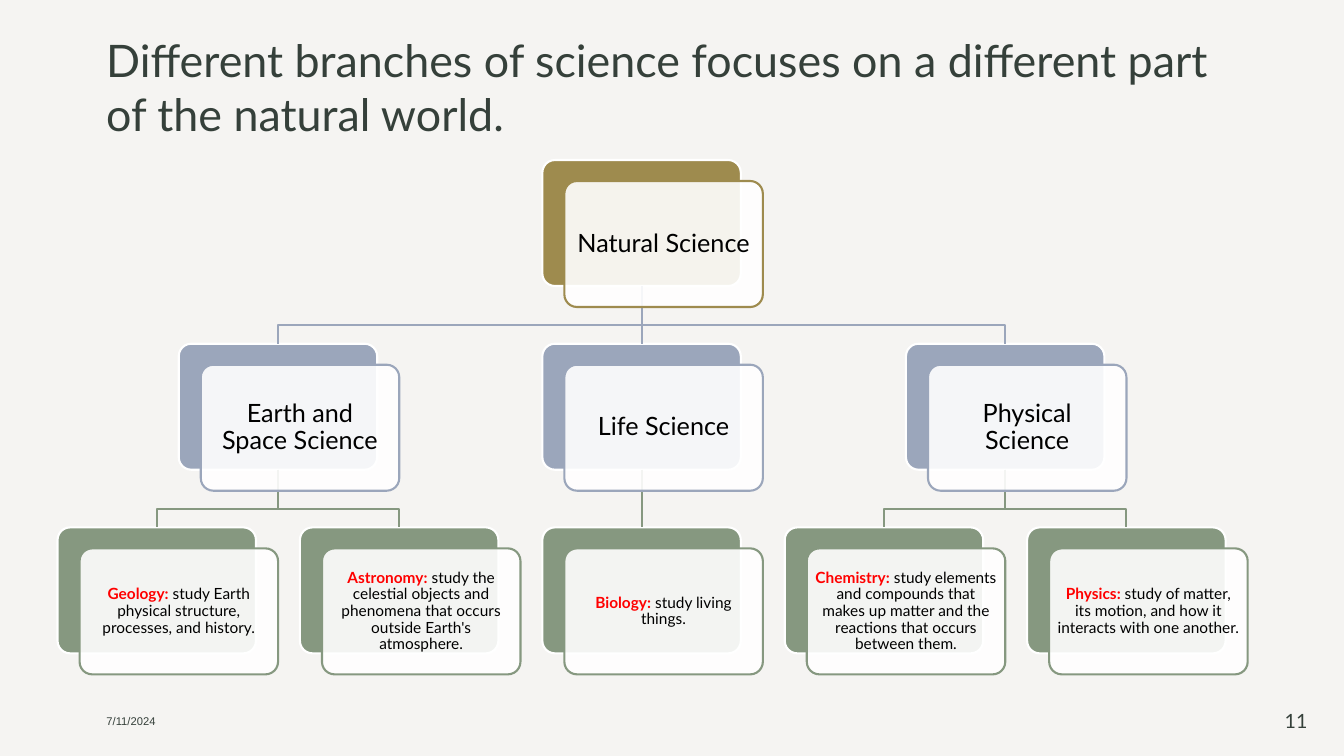
import lxml.etree
import pptx
import pptx.dml.color
import pptx.enum.shapes
import pptx.enum.text
import pptx.oxml.ns
import pptx.util
from dataclasses import dataclass

Pt = pptx.util.Pt
Shape = pptx.enum.shapes.MSO_SHAPE
Align = pptx.enum.text.PP_ALIGN
Anchor = pptx.enum.text.MSO_ANCHOR

TITLE = "Different branches of science focuses on a different part of the natural world."
DATE = "7/11/2024"
PAGE = "11"
ROOT = "Natural Science"
# Each branch holds its fields as (red heading, description).
BRANCHES = [
    ("Earth and Space Science", [
        ("Geology:", " study Earth physical structure, processes, and history."),
        ("Astronomy:", " study the celestial objects and phenomena that occurs outside Earth's atmosphere."),
    ]),
    ("Life Science", [
        ("Biology:", " study living things."),
    ]),
    ("Physical Science", [
        ("Chemistry:", " study elements and compounds that makes up matter and the reactions that occurs between them."),
        ("Physics:", " study of matter, its motion, and how it interacts with one another."),
    ]),
]


@dataclass(frozen=True)
class Theme:
    font: str = "Lato"
    date_font: str = "Arial"
    background: str = "F5F4F2"
    heading: str = "35403A"
    body: str = "000000"
    accent: str = "FF0000"
    card: str = "FFFFFF"
    levels: tuple = ("9E8B4E", "9BA6BB", "869880")
    title_size: float = 32
    label_size: float = 18
    field_size: float = 11
    date_size: float = 8
    page_size: float = 14
    line: float = 1.5
    card_opacity: int = 90


THEME = Theme()
CARD_WIDTH, CARD_HEIGHT = 141.8, 90
LEFT, TOP = 41.1, 114.3
COLUMN_STEP, ROW_STEP = 173.15, 131.2
FRONT_DX, FRONT_DY = 15.75, 15
BEND = 28  # drop from a card to the crossbar below it


@dataclass
class Node:
    level: int
    column: float
    runs: list
    parent: object = None
    back: object = None

    @property
    def left(self):
        return LEFT + self.column * COLUMN_STEP

    @property
    def top(self):
        return TOP + self.level * ROW_STEP

    @property
    def center(self):
        return self.left + CARD_WIDTH / 2


def rgb(value):
    return pptx.dml.color.RGBColor.from_string(value)


def write_text(shape, runs, size, font=THEME.font, align=Align.LEFT,
               anchor=Anchor.MIDDLE, inset=(7.2, 3.6), spacing=None):
    """Fill a shape with one paragraph of (text, colour, bold) runs."""
    frame = shape.text_frame
    frame.word_wrap = True
    frame.vertical_anchor = anchor
    frame.margin_left = frame.margin_right = Pt(inset[0])
    frame.margin_top = frame.margin_bottom = Pt(inset[1])
    paragraph = frame.paragraphs[0]
    paragraph.alignment = align
    if spacing:
        paragraph.line_spacing = spacing
    for text, color, bold in runs:
        run = paragraph.add_run()
        run.text = text
        run.font.name = font
        run.font.size = Pt(size)
        run.font.bold = bold
        run.font.color.rgb = rgb(color)


def add_text(slide, box, text, **text_format):
    shape = slide.shapes.add_textbox(*map(Pt, box))
    write_text(shape, [(text, THEME.heading, False)], **text_format)


def add_card(slide, left, top, fill, line):
    shape = slide.shapes.add_shape(
        Shape.ROUNDED_RECTANGLE, Pt(left), Pt(top), Pt(CARD_WIDTH), Pt(CARD_HEIGHT))
    shape.adjustments[0] = 0.1
    shape.shadow.inherit = False
    shape.fill.solid()
    shape.fill.fore_color.rgb = rgb(fill)
    shape.line.color.rgb = rgb(line)
    shape.line.width = Pt(THEME.line)
    return shape


def add_front(slide, node):
    shape = add_card(slide, node.left + FRONT_DX, node.top + FRONT_DY,
                     THEME.card, THEME.levels[node.level])
    qn = pptx.oxml.ns.qn
    color = shape.fill._xPr.find(qn("a:solidFill")).find(qn("a:srgbClr"))
    alpha = lxml.etree.SubElement(color, qn("a:alpha"))
    alpha.set("val", str(THEME.card_opacity * 1000))
    is_field = node.level == 2
    inset = 3.3 if is_field else 5.4
    write_text(shape, node.runs, THEME.field_size if is_field else THEME.label_size,
               align=Align.CENTER, inset=(inset, inset), spacing=0.9)


def link(slide, parent, child):
    """Join parent to child: straight if aligned, otherwise with two bends."""
    start = parent.top + CARD_HEIGHT
    if parent.column == child.column:
        line = slide.shapes.add_connector(
            pptx.enum.shapes.MSO_CONNECTOR.STRAIGHT,
            Pt(parent.center), Pt(start), Pt(child.center), Pt(child.top))
        line.begin_connect(parent.back, 2)
        line.end_connect(child.back, 0)
        lxml.etree.SubElement(line._element.spPr, pptx.oxml.ns.qn("a:effectLst"))
    else:
        builder = slide.shapes.build_freeform(Pt(parent.center), Pt(start))
        corners = [(parent.center, start + BEND), (child.center, start + BEND),
                   (child.center, child.top)]
        builder.add_line_segments([(Pt(x), Pt(y)) for x, y in corners], close=False)
        line = builder.convert_to_shape()
        line.shadow.inherit = False
        line.fill.background()
    line.line.color.rgb = rgb(THEME.levels[child.level])
    line.line.width = Pt(THEME.line)


def build_nodes():
    """Give fields one column each and centre every branch over its fields."""
    field_count = sum(len(fields) for _, fields in BRANCHES)
    root = Node(0, (field_count - 1) / 2, [(ROOT, THEME.body, False)])
    nodes, column = [root], 0
    for name, fields in BRANCHES:
        branch = Node(1, column + (len(fields) - 1) / 2, [(name, THEME.body, False)], root)
        nodes.append(branch)
        for heading, description in fields:
            runs = [(heading, THEME.accent, True), (description, THEME.body, False)]
            nodes.append(Node(2, column, runs, branch))
            column += 1
    return nodes


def main():
    presentation = pptx.Presentation()
    presentation.slide_width, presentation.slide_height = Pt(960), Pt(540)
    slide = presentation.slides.add_slide(presentation.slide_layouts[6])
    slide.background.fill.solid()
    slide.background.fill.fore_color.rgb = rgb(THEME.background)

    add_text(slide, (68.75, 10.8, 823, 92.9), TITLE, size=THEME.title_size, anchor=Anchor.BOTTOM)
    nodes = build_nodes()
    for node in nodes:
        node.back = add_card(slide, node.left, node.top, THEME.levels[node.level], THEME.card)
    for node in nodes[1:]:
        link(slide, node.parent, node)
    for node in nodes:
        add_front(slide, node)
    add_text(slide, (69, 500.4, 216, 28.8), DATE, size=THEME.date_size, font=THEME.date_font)
    add_text(slide, (900, 500.4, 41, 28.8), PAGE, size=THEME.page_size, align=Align.RIGHT)
    presentation.save("out.pptx")


if __name__ == "__main__":
    main()
